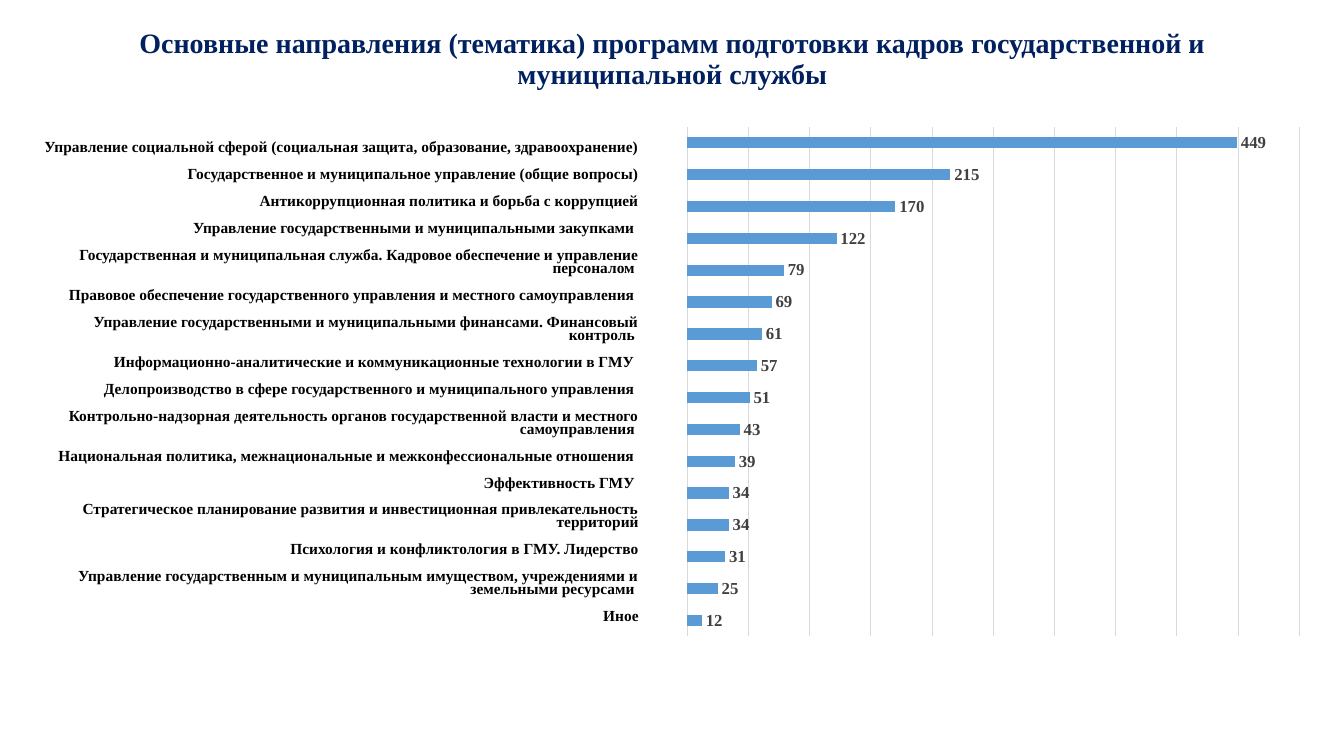
from lxml.etree import SubElement
from pptx import Presentation
from pptx.chart.data import CategoryChartData
from pptx.dml.color import RGBColor
from pptx.enum.chart import XL_CHART_TYPE, XL_LABEL_POSITION
from pptx.enum.text import MSO_ANCHOR, MSO_AUTO_SIZE, PP_ALIGN
from pptx.oxml import parse_xml
from pptx.oxml.ns import nsdecls, qn
from pptx.util import Cm, Pt

SERIF = "Times New Roman"
TITLE = "Основные направления (тематика) программ подготовки кадров государственной и муниципальной службы"
TOPICS = [
    ("Управление социальной сферой (социальная защита, образование, здравоохранение)", 449),
    ("Государственное и муниципальное управление (общие вопросы)", 215),
    ("Антикоррупционная политика и борьба с коррупцией", 170),
    ("Управление государственными и муниципальными закупками ", 122),
    ("Государственная и муниципальная служба. Кадровое обеспечение и управление персоналом ", 79),
    ("Правовое обеспечение государственного управления и местного самоуправления ", 69),
    ("Управление государственными и муниципальными финансами. Финансовый контроль ", 61),
    ("Информационно-аналитические и коммуникационные технологии в ГМУ ", 57),
    ("Делопроизводство в сфере государственного и муниципального управления ", 51),
    ("Контрольно-надзорная деятельность органов государственной власти и местного самоуправления ", 43),
    ("Национальная политика, межнациональные и межконфессиональные отношения ", 39),
    ("Эффективность ГМУ ", 34),
    ("Стратегическое планирование развития и инвестиционная привлекательность территорий", 34),
    ("Психология и конфликтология в ГМУ. Лидерство", 31),
    ("Управление государственным и муниципальным имуществом, учреждениями и земельными ресурсами ", 25),
    ("Иное", 12),
]


def color(value):
    """Turn a hex string into a colour."""
    return RGBColor.from_string(value)


def format_font(font, size, fill, name=SERIF, bold=True):
    """Set the typeface, size, weight and colour of a font."""
    font.name, font.size, font.bold = name, Pt(size), bold
    font.color.rgb = color(fill)


def write_text(paragraph, text, size, fill, align, line_spacing, space_before=0):
    """Write one formatted run without a bullet into a paragraph."""
    run = paragraph.add_run()
    run.text = text
    format_font(run.font, size, fill)
    paragraph.alignment = align
    paragraph.line_spacing = line_spacing
    paragraph.space_before = Pt(space_before)
    properties = paragraph._p.get_or_add_pPr()
    properties.set("marL", "0")
    properties.set("indent", "0")
    SubElement(properties, qn("a:buNone"))


def place_placeholder(shape, box, anchor):
    """Move a placeholder into its box and return its text frame."""
    shape.left, shape.top, shape.width, shape.height = map(Cm, box)
    frame = shape.text_frame
    frame.word_wrap = True
    frame.auto_size = MSO_AUTO_SIZE.NONE
    frame.vertical_anchor = anchor
    return frame


def fill_title(slide, box):
    """Fill the title placeholder, with its text raised in the box."""
    frame = place_placeholder(slide.shapes.title, box, MSO_ANCHOR.MIDDLE)
    frame.margin_bottom = Cm(1)
    write_text(frame.paragraphs[0], TITLE, size=20, fill="002060",
               align=PP_ALIGN.CENTER, line_spacing=0.9)


def fill_topics(slide, box):
    """List the topics, right-aligned towards the chart."""
    frame = place_placeholder(slide.placeholders[1], box, MSO_ANCHOR.TOP)
    frame.margin_top = Cm(0.72)
    for index, (topic, _) in enumerate(TOPICS):
        paragraph = frame.add_paragraph() if index else frame.paragraphs[0]
        write_text(paragraph, topic, size=11, fill="000000", align=PP_ALIGN.RIGHT,
                   line_spacing=0.7, space_before=10 if index else 0)


def set_plot_layout(chart, x, y, w, h):
    """Fix the inner plot area as fractions of the chart."""
    plot_area = chart._chartSpace.chart.plotArea
    for layout in plot_area.findall(qn("c:layout")):
        plot_area.remove(layout)
    sizes = "".join(f'<c:{key} val="{value}"/>'
                    for key, value in {"x": x, "y": y, "w": w, "h": h}.items())
    plot_area.insert(0, parse_xml(
        f'<c:layout {nsdecls("c")}><c:manualLayout><c:layoutTarget val="inner"/>'
        f'<c:xMode val="edge"/><c:yMode val="edge"/>{sizes}</c:manualLayout></c:layout>'))


def add_topic_chart(slide, box):
    """Add the bar chart with the number of programmes per topic."""
    data = CategoryChartData()
    data.categories = [str(number) for number in range(1, len(TOPICS) + 1)]
    data.add_series("Series 1", [value for _, value in reversed(TOPICS)])
    chart = slide.shapes.add_chart(XL_CHART_TYPE.BAR_CLUSTERED, *map(Cm, box), data).chart
    chart.has_legend = chart.has_title = False
    format_font(chart.font, 10, "000000", name="Calibri", bold=False)
    set_plot_layout(chart, 0.02, 0.023, 0.948, 0.9)

    chart.category_axis.visible = False
    axis = chart.value_axis
    axis.visible = False
    axis.minimum_scale, axis.maximum_scale, axis.major_unit = 0, 500, 50
    axis.has_major_gridlines = True
    gridline = axis.major_gridlines.format.line
    gridline.color.rgb = color("D9D9D9")
    gridline.width = Pt(0.75)

    plot = chart.plots[0]
    plot.vary_by_categories = False
    plot.gap_width = 182
    series = plot.series[0]
    series.format.fill.solid()
    series.format.fill.fore_color.rgb = color("5B9BD5")
    labels = series.data_labels
    labels.show_value = True
    labels.position = XL_LABEL_POSITION.OUTSIDE_END
    format_font(labels.font, 12, "404040")


def main():
    """Build the slide and save it."""
    presentation = Presentation()
    presentation.slide_width, presentation.slide_height = Cm(33.87), Cm(19.05)
    slide = presentation.slides.add_slide(presentation.slide_layouts[1])
    top, height = 2.87, 14.27
    fill_title(slide, (2.34, 1.02, 29.21, 1.85))
    fill_topics(slide, (0.58, top, 15.77, height))
    add_topic_chart(slide, (16.99, top, 16.28, height))
    presentation.save("out.pptx")


if __name__ == "__main__":
    main()
